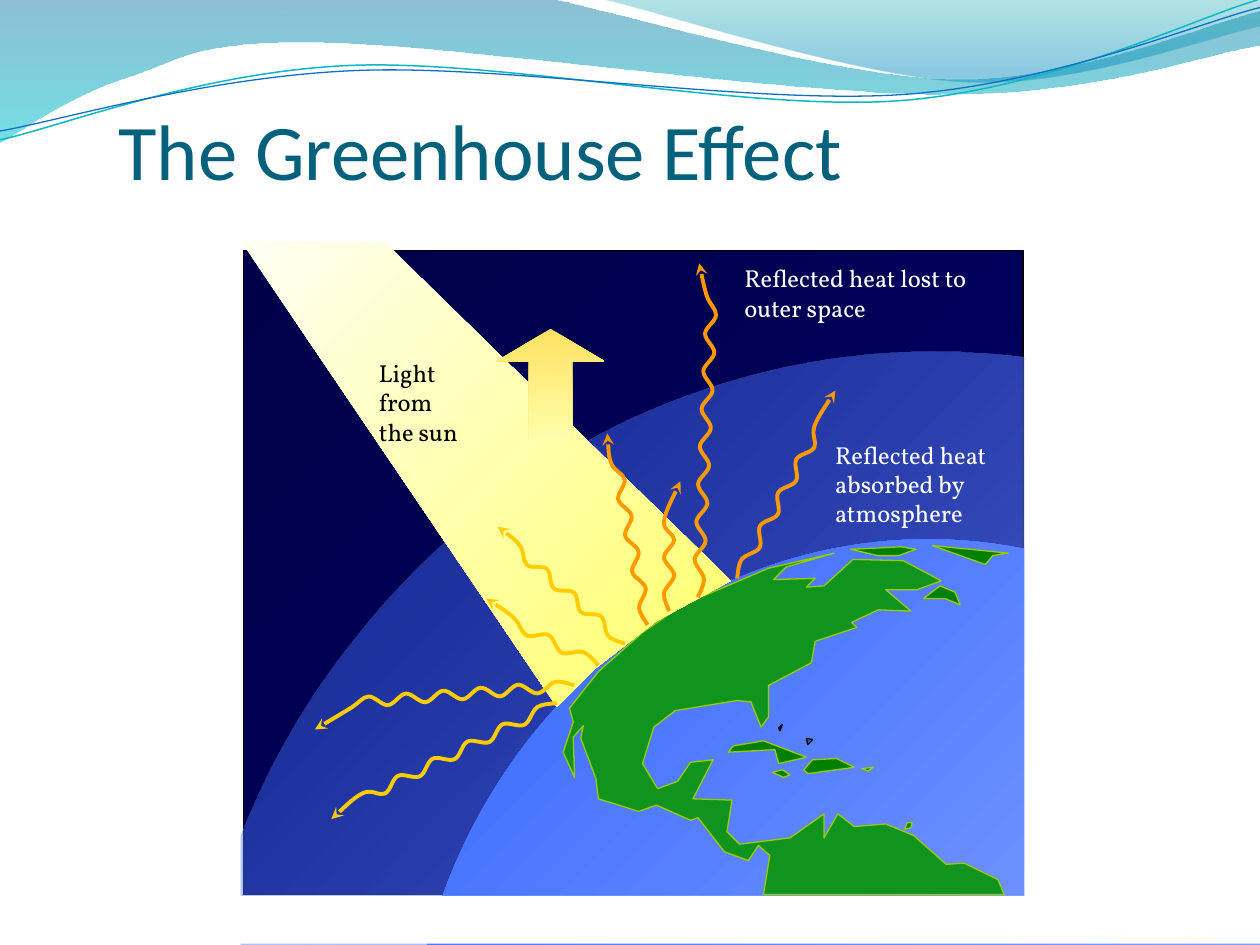
"""Build the slide that explains the greenhouse effect."""
from math import hypot

from pptx import Presentation
from pptx.dml.color import RGBColor
from pptx.enum.shapes import MSO_SHAPE
from pptx.enum.text import MSO_ANCHOR
from pptx.oxml.ns import qn
from pptx.util import Inches, Pt
from lxml.etree import SubElement

COLUMNS, ROWS = 10, 7.5
COLOURS = {
    "title": "04617B", "black": "000000", "white": "FFFFFF",
    "land": "10941D", "island": "008000", "coast": "99CC00", "islet": "0F6FC6",
    "lost heat": "FF9900", "ground heat": "FFCC00",
    "teal line": "0AB8BF", "blue line": "0F6FC6",
    "night": "000049", "dusk": "000066", "ocean": "3366FF", "haze": "B3C5FF",
    "pale sun": "FFFFF3", "sun": "FFFF66", "arrow top": "FFE161", "arrow base": "FFFFAB",
    "wave top": "0074A1", "wave base": "00C6CF", "crest top": "00A1A9", "crest base": "008BBF",
}
GRADIENTS = {
    "space": (45, [("night", 0, 100), ("dusk", 1, 100)]),
    "atmosphere": (45, [("ocean", 0, 33), ("haze", 1, 100)]),
    "earth": (45, [("ocean", 0, 100), ("haze", 1, 100)]),
    "sunbeam": (45, [("pale sun", 0, 100), ("sun", 1, 100)]),
    "up arrow": (90, [("arrow top", 0, 100), ("arrow base", 1, 100)]),
    "wave": (90, [("wave top", 0, 45), ("wave base", 1, 55)]),
    "crest": (90, [("crest top", 0, 30), ("crest base", 0.8, 45)]),
}
WAVE_TOP = [(4.4, 0), (7.58, 0.63), (10, 0.09)]
WAVE_BASE = [(10, 0.36), (7.46, 0.75), (2.57, 0.34), (1, 0.62), (0, 1.13)]
CREST = [(4.79, 0), (7.69, 0.65), (10, 0.21)]
TEAL_LINE = [(0, 1.11), (2.77, 0.52), (7.13, 0.8), (9.98, 0)]
BLUE_LINE = [(0, 1.04), (2.83, 0.56), (7.17, 0.75), (10, 0.06)]
CONTINENT = [
    (5.42, 4.8), (5.1, 5.02), (4.75, 5.33), (4.52, 5.62), (4.55, 5.73), (4.47, 5.97), (4.56, 6.17),
    (4.55, 5.85), (4.63, 5.76), (4.61, 5.86), (4.73, 6.18), (4.75, 6.34), (5.07, 6.44), (5.21, 6.39),
    (5.48, 6.51), (5.54, 6.49), (5.75, 6.76), (5.94, 6.83), (6.02, 6.71), (6.11, 6.79), (6.06, 7.1),
    (7.97, 7.1), (7.92, 6.98), (7.65, 6.85), (7.51, 6.86), (7.25, 6.63), (7.03, 6.54), (6.78, 6.56),
    (6.65, 6.46), (6.54, 6.65), (6.54, 6.46), (6.27, 6.65), (5.87, 6.7), (5.77, 6.6), (5.81, 6.35),
    (5.5, 6.34), (5.66, 6.03), (5.48, 6.05), (5.38, 6.2), (5.22, 6.26), (5.1, 6.06), (5.19, 5.77),
    (5.36, 5.64), (5.85, 5.56), (5.96, 5.57), (6.04, 5.77), (6.1, 5.69), (6.1, 5.44), (6.44, 5.26),
    (6.47, 5.09), (6.8, 4.98), (6.76, 4.94), (6.97, 4.84), (7.23, 4.85), (7.03, 4.68), (7.28, 4.68),
    (7.47, 4.61), (7.17, 4.45), (6.77, 4.44), (6.54, 4.65), (6.4, 4.66), (6.47, 4.59), (6.14, 4.6),
    (6.24, 4.5), (6.62, 4.39), (6.1, 4.51)]
ISLANDS = [
    [(5.78, 5.97), (5.82, 5.92), (6.06, 5.88), (6.4, 6.01), (6.18, 6.06), (6.15, 5.95)],
    [(6.38, 6.11), (6.45, 6.03), (6.64, 6.02), (6.78, 6.09), (6.41, 6.14)],
    [(6.84, 6.1), (6.93, 6.09), (6.89, 6.12)],
    [(7.33, 4.75), (7.46, 4.65), (7.58, 4.7), (7.62, 4.8), (7.5, 4.75)],
    [(7.4, 4.33), (7.82, 4.48), (7.88, 4.41), (8, 4.39)],
    [(6.75, 4.36), (6.97, 4.41), (7.13, 4.41), (7.27, 4.36), (7.15, 4.34)],
    [(6.13, 6.13), (6.22, 6.17), (6.27, 6.15), (6.21, 6.11)],
    [(7.18, 6.58), (7.2, 6.53), (7.24, 6.53), (7.23, 6.57)]]
ISLETS = [[(6.21, 5.75), (6.18, 5.78), (6.19, 5.8)], [(6.4, 5.86), (6.41, 5.91), (6.45, 5.87)]]
SUNBEAM = [(1.91, 1.91), (4.42, 5.61), (4.72, 5.31), (5.21, 4.93), (5.8, 4.61), (3.06, 1.93)]
RAYS = {
    "lost heat": [((5.85, 4.59), (6.5, 3.4), (6.63, 3.1), 9, -1),
                  ((5.54, 4.74), (5.65, 2.35), (5.55, 2.09), 16, 1),
                  ((5.14, 4.96), (4.89, 3.67), (4.82, 3.44), 9, -1),
                  ((5.31, 4.85), (5.31, 4.14), (5.4, 3.82), 5, -1)],
    "ground heat": [((4.96, 5.11), (4.1, 4.36), (3.95, 4.18), 8, -1),
                    ((4.75, 5.28), (4.06, 4.94), (3.86, 4.75), 5, 1),
                    ((4.56, 5.44), (2.78, 5.58), (2.5, 5.79), 12, 1),
                    ((4.42, 5.58), (2.9, 6.33), (2.63, 6.5), 11, 1)],
}
LABELS = [((2.91, 2.79, 1.06, 0.57), ["Light from", "the sun"], "black"),
          ((6.53, 3.44, 1.43, 0.81), ["Reflected heat", "absorbed by", "atmosphere"], "white"),
          ((5.81, 2.04, 2.02, 0.57), ["Reflected heat lost to", "outer space"], "white")]
COVERS = [(8.13, 2.78, 1.87, 4.49), (1.9, 7.11, 8.1, 0.38), (1.45, 6.13, 0.46, 1.37)]


def write(paragraph, text, *, size, font, colour):
    run = paragraph.add_run()
    run.text = text
    run.font.size, run.font.name = Pt(size), font
    run.font.color.rgb = RGBColor.from_string(COLOURS[colour])


def smooth(points):
    padded = [points[0], *points, points[-1]]
    segments = [points[0]]
    for before, start, end, after in zip(padded, padded[1:], padded[2:], padded[3:]):
        leave = tuple(s + (e - b) / 6 for b, s, e in zip(before, start, end))
        arrive = tuple(e - (a - s) / 6 for s, e, a in zip(start, end, after))
        segments.append([leave, arrive, end])
    return segments


def ripple(start, turn, tip, bends, side, height=0.04):
    across, down = turn[0] - start[0], turn[1] - start[1]
    length = hypot(across, down)
    points = [start]
    for bend in range(1, bends + 1):
        share, swing = bend / bends, side * height / length
        points.append((start[0] + share * across - swing * down,
                       start[1] + share * down + swing * across))
        side = -side
    return [*points, tip]


class Canvas:
    def __init__(self, presentation):
        self.slide = presentation.slides.add_slide(presentation.slide_layouts[6])
        self.column = presentation.slide_width / COLUMNS
        self.row = presentation.slide_height / ROWS

    def place(self, point):
        return round(point[0] * self.column), round(point[1] * self.row)

    def paint(self, shape, fill=None, line=None, width=0.75):
        shape.shadow.inherit = False
        if fill in GRADIENTS:
            angle, stops = GRADIENTS[fill]
            shape.fill.gradient()
            shape.fill.gradient_angle = 360 - angle
            for stop, (colour, position, _) in zip(shape.fill.gradient_stops, stops):
                stop.color.rgb = RGBColor.from_string(COLOURS[colour])
                stop.position = position
            for element, (_, _, opacity) in zip(shape.element.spPr.iter(qn("a:srgbClr")), stops):
                if opacity < 100:
                    SubElement(element, qn("a:alpha"), val=str(opacity * 1000))
        elif fill:
            shape.fill.solid()
            shape.fill.fore_color.rgb = RGBColor.from_string(COLOURS[fill])
        else:
            shape.fill.background()
        if line:
            shape.line.color.rgb = RGBColor.from_string(COLOURS[line])
            shape.line.width = Pt(width)
        else:
            shape.line.fill.background()
        return shape

    def preset(self, kind, box, **style):
        corner, size = self.place(box[:2]), self.place(box[2:])
        return self.paint(self.slide.shapes.add_shape(kind, *corner, *size), **style)

    def polygon(self, points, close=True, **style):
        start, *others = map(self.place, points)
        builder = self.slide.shapes.build_freeform(*start, scale=1.0)
        builder.add_line_segments(others, close=close)
        return self.paint(builder.convert_to_shape(), **style)

    def curve(self, segments, close=False, **style):
        start, *others = segments
        points = [point for part in others for point in (part if len(part) == 3 else part * 3)]
        shape = self.polygon([start, *points], close, **style)
        outline = next(shape.element.iter(qn("a:path")))
        for index, line in enumerate(outline.findall(qn("a:lnTo"))[:len(points)]):
            if index % 3 == 0:
                bend = outline.makeelement(qn("a:cubicBezTo"))
                line.addprevious(bend)
            bend.append(line[0])
            outline.remove(line)
        return shape

    def ray(self, points, colour):
        shape = self.curve(smooth(points), line=colour, width=2.25)
        SubElement(shape.element.spPr.find(qn("a:ln")), qn("a:tailEnd"), type="stealth")

    def text(self, box, lines, anchor=MSO_ANCHOR.TOP, side=0.1, bottom=0.05, **style):
        frame = self.slide.shapes.add_textbox(*self.place(box[:2]), *self.place(box[2:])).text_frame
        frame.word_wrap, frame.vertical_anchor = True, anchor
        frame.margin_left = frame.margin_right = round(side * self.column)
        frame.margin_bottom = round(bottom * self.row)
        for index, line in enumerate(lines):
            write(frame.add_paragraph() if index else frame.paragraphs[0], line, **style)


def main():
    presentation = Presentation()
    presentation.slide_width, presentation.slide_height = Inches(COLUMNS), Inches(ROWS)
    canvas = Canvas(presentation)
    wave = [(0, 0), WAVE_TOP[:1], *smooth(WAVE_TOP)[1:], WAVE_BASE[:1], *smooth(WAVE_BASE)[1:]]
    canvas.curve(wave, close=True, fill="wave")
    canvas.curve([*smooth(CREST), [(10, 0)]], close=True, fill="crest")
    canvas.curve(smooth(TEAL_LINE), line="teal line", width=0.85)
    canvas.curve(smooth(BLUE_LINE), line="blue line")
    canvas.preset(MSO_SHAPE.RECTANGLE, (1.93, 1.99, 6.19, 5.11), fill="space", line="black")
    canvas.preset(MSO_SHAPE.OVAL, (1.44, 2.79, 11.97, 12.56), fill="atmosphere")
    canvas.preset(MSO_SHAPE.OVAL, (3.23, 4.28, 8.27, 8.89), fill="earth")
    canvas.text((0.94, 0.77, 8.65, 0.79), ["The Greenhouse Effect"], MSO_ANCHOR.BOTTOM, 0, 0,
                size=45, font="Calibri", colour="title")
    canvas.polygon(CONTINENT, fill="land", line="coast")
    for island in ISLANDS:
        canvas.polygon(island, fill="island", line="coast")
    for islet in ISLETS:
        canvas.polygon(islet, fill="islet", line="black")
    canvas.polygon(SUNBEAM, fill="sunbeam")
    for colour, rays in RAYS.items():
        for ray in rays:
            canvas.ray(ripple(*ray), colour)
    arrow = canvas.preset(MSO_SHAPE.UP_ARROW, (3.94, 2.61, 0.86, 0.9), fill="up arrow")
    arrow.adjustments[0], arrow.adjustments[1] = 0.4, 0.3
    for box, lines, colour in LABELS:
        canvas.text(box, lines, size=14, font="Vollkorn", colour=colour)
    for box in COVERS:
        canvas.preset(MSO_SHAPE.RECTANGLE, box, fill="white")
    presentation.save("out.pptx")


if __name__ == "__main__":
    main()
